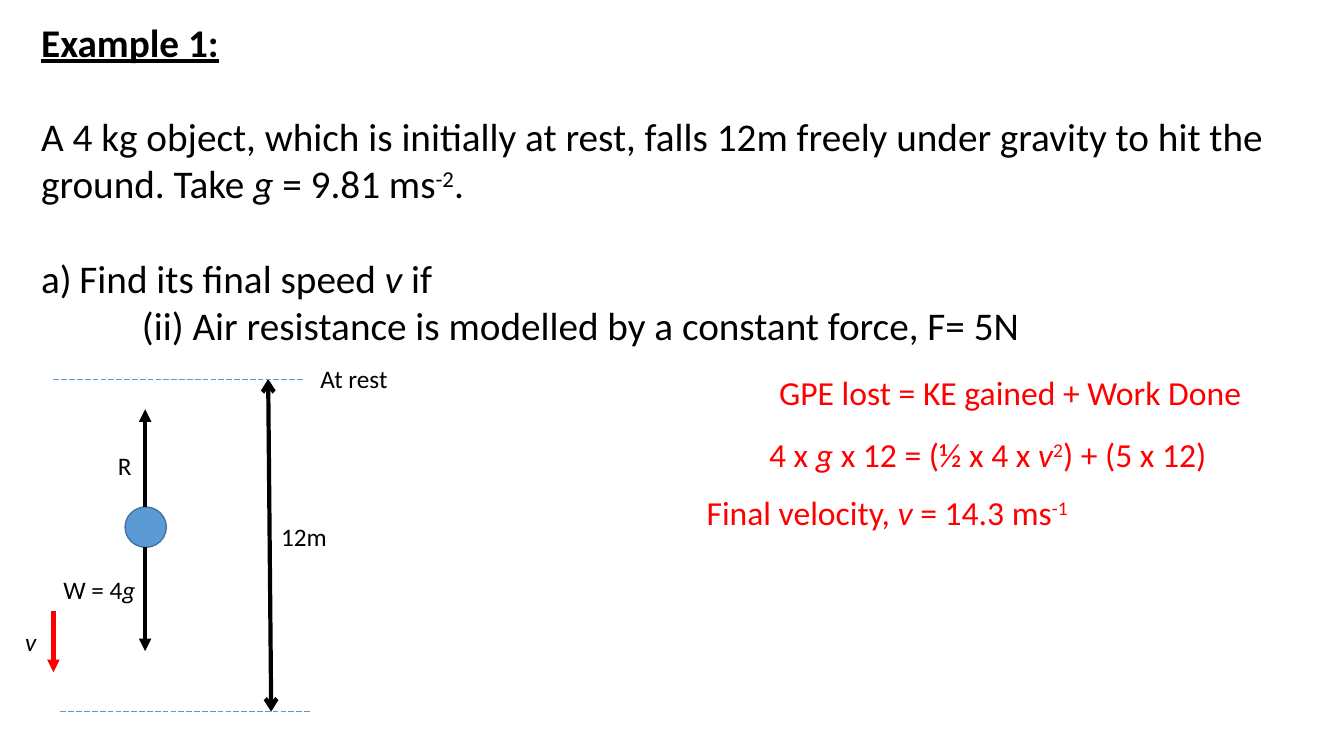
"""Build a mechanics slide: an object falling 12 m against constant air resistance."""
from dataclasses import dataclass

from lxml.etree import SubElement
from pptx import Presentation
from pptx.dml.color import RGBColor
from pptx.enum.dml import MSO_LINE
from pptx.enum.shapes import MSO_CONNECTOR, MSO_SHAPE
from pptx.enum.text import MSO_AUTO_SIZE
from pptx.oxml.ns import qn
from pptx.slide import Slide
from pptx.util import Inches, Pt

COLOURS = {"black": "000000", "red": "FF0000", "blue": "5B9BD5", "edge": "43739E"}
FONT = "Calibri"


@dataclass(frozen=True)
class Span:
    text: str
    italic: bool = False
    raised: bool = False
    heading: bool = False


@dataclass(frozen=True)
class Para:
    spans: tuple[Span, ...]
    gap: float = 0
    indent: float = 0
    numbered: bool = False


@dataclass(frozen=True)
class Box:
    left: float
    top: float
    width: float
    height: float
    paras: tuple[Para, ...]
    size: float = 18
    colour: str = "black"
    wrap: bool = False


@dataclass(frozen=True)
class Line:
    start: tuple[float, float]
    end: tuple[float, float]
    colour: str = "black"
    weight: float = 3
    dashed: bool = False
    head: str = ""
    tail: str = ""


def colour_of(name: str) -> RGBColor:
    return RGBColor.from_string(COLOURS[name])


def label(left: float, top: float, width: float, *spans: Span) -> Box:
    return Box(left, top, width, 0.4, (Para(spans),))


def working(left: float, top: float, width: float, *spans: Span) -> Box:
    return Box(left, top, width, 0.5, (Para(spans),), 24, "red")


BLANK_LINE = 34
QUESTION = Box(0.31, 0.13, 12.62, 3.4, (
    Para((Span("Example 1:", heading=True),)),
    Para((
        Span("A 4 kg object, which is initially at rest, falls 12m freely "
             "under gravity to hit the ground. Take "),
        Span("g", italic=True), Span(" = 9.81 ms"),
        Span("-2", raised=True), Span("."),
    ), gap=BLANK_LINE),
    Para((Span("Find its final speed "), Span("v", italic=True), Span(" if")),
         gap=BLANK_LINE, indent=0.38, numbered=True),
    Para((Span("(ii) Air resistance is modelled by a constant force, F= 5N"),), indent=1),
), 28, wrap=True)

BOXES = (
    QUESTION,
    label(2.69, 5.12, 0.66, Span("12m")),
    label(0.53, 5.65, 0.93, Span("W = 4"), Span("g", italic=True)),
    label(1.07, 4.42, 0.34, Span("R")),
    label(3.08, 3.56, 0.87, Span("At rest")),
    label(0.15, 6.16, 0.32, Span("v", italic=True)),
    working(7.63, 3.64, 4.83, Span("GPE lost = KE gained + Work Done")),
    working(7.53, 4.26, 4.57, Span("4 x "), Span("g", italic=True),
            Span(" x 12 = (½ x 4 x "), Span("v", italic=True),
            Span("2", raised=True), Span(") + (5 x 12)")),
    working(6.91, 4.83, 3.84, Span("Final velocity, "), Span("v", italic=True),
            Span(" = 14.3 ms"), Span("-1", raised=True)),
)

START_LEVEL, GROUND_LEVEL = 3.76, 7.06
LINES = (
    Line((1.44, 5.03), (1.44, 4.06), tail="triangle"),
    Line((1.44, 5.43), (1.44, 6.46), tail="triangle"),
    Line((2.66, START_LEVEL), (2.69, GROUND_LEVEL), head="arrow", tail="arrow"),
    Line((0.53, START_LEVEL), (3.02, START_LEVEL), "blue", 0.5, True),
    Line((0.6, GROUND_LEVEL), (3.08, GROUND_LEVEL), "blue", 0.5, True),
    Line((0.53, 6.06), (0.53, 6.67), "red", tail="triangle"),
)


def draw_box(page: Slide, box: Box) -> None:
    shape = page.shapes.add_textbox(
        Inches(box.left), Inches(box.top), Inches(box.width), Inches(box.height))
    frame = shape.text_frame
    frame.word_wrap = box.wrap
    frame.auto_size = MSO_AUTO_SIZE.SHAPE_TO_FIT_TEXT
    for index, para in enumerate(box.paras):
        paragraph = frame.add_paragraph() if index else frame.paragraphs[0]
        if para.gap:
            paragraph.space_before = Pt(para.gap)
        if para.indent:
            properties = paragraph._p.get_or_add_pPr()
            properties.set("marL", str(Inches(para.indent)))
            if para.numbered:
                properties.set("indent", str(-Inches(para.indent)))
                SubElement(properties, qn("a:buAutoNum"), type="alphaLcParenR")
        for span in para.spans:
            run = paragraph.add_run()
            run.text = span.text
            font = run.font
            font.name, font.size = FONT, Pt(box.size)
            font.color.rgb = colour_of(box.colour)
            font.italic = span.italic
            font.bold = font.underline = span.heading
            if span.raised:
                run._r.get_or_add_rPr().set("baseline", "30000")


def draw_line(page: Slide, line: Line) -> None:
    points = [Inches(value) for value in (*line.start, *line.end)]
    connector = page.shapes.add_connector(MSO_CONNECTOR.STRAIGHT, *points)
    connector.line.color.rgb = colour_of(line.colour)
    connector.line.width = Pt(line.weight)
    if line.dashed:
        connector.line.dash_style = MSO_LINE.LONG_DASH
    outline = connector.line._get_or_add_ln()
    for tag, kind in (("a:headEnd", line.head), ("a:tailEnd", line.tail)):
        if kind:
            SubElement(outline, qn(tag), type=kind)
    SubElement(connector._element.spPr, qn("a:effectLst"))


def draw_object(page: Slide) -> None:
    ball = page.shapes.add_shape(
        MSO_SHAPE.OVAL, Inches(1.24), Inches(5.03), Inches(0.41), Inches(0.4))
    ball.shadow.inherit = False
    ball.fill.solid()
    ball.fill.fore_color.rgb = colour_of("blue")
    ball.line.color.rgb = colour_of("edge")
    ball.line.width = Pt(1)


def main() -> None:
    deck = Presentation()
    deck.slide_width, deck.slide_height = Inches(13.33), Inches(7.5)
    page = deck.slides.add_slide(deck.slide_layouts[6])
    draw_object(page)
    for line in LINES:
        draw_line(page, line)
    for box in BOXES:
        draw_box(page, box)
    deck.save("out.pptx")


if __name__ == "__main__":
    main()
